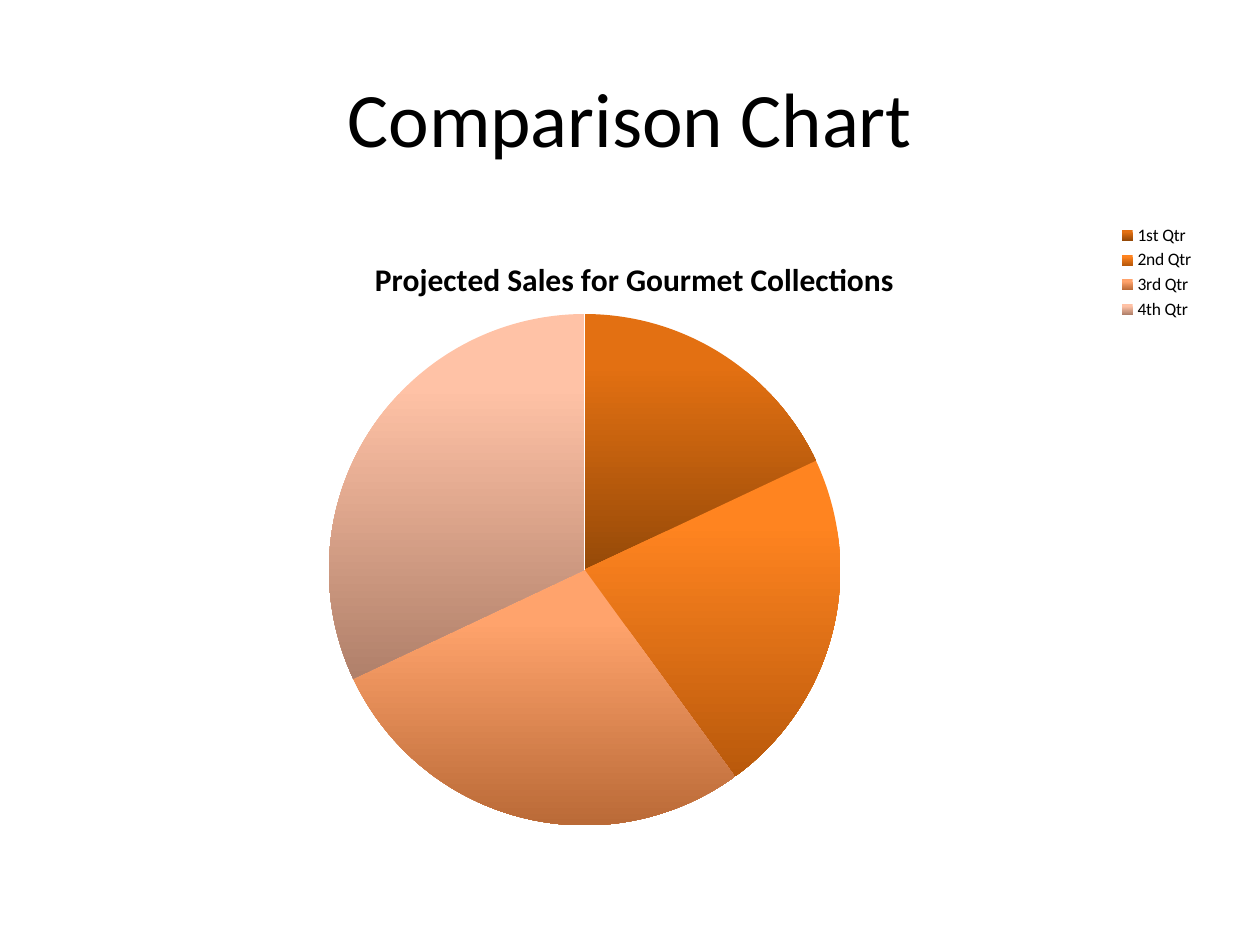
from dataclasses import dataclass

import pptx
import pptx.chart.data
import pptx.dml.color
import pptx.enum.chart
import pptx.enum.text
import pptx.oxml
import pptx.oxml.ns
import pptx.util
from pptx.util import Inches


@dataclass(frozen=True)
class Theme:
    font: str = "Calibri"
    text: str = "000000"
    title_size: int = 44
    chart_title_size: int = 18
    legend_size: int = 10


@dataclass(frozen=True)
class Quarter:
    name: str
    sales: int
    top_color: str
    bottom_color: str


THEME = Theme()
TITLE_ONLY = 5
QUARTERS = [
    Quarter("1st Qtr", 18, "E37012", "964A08"),
    Quarter("2nd Qtr", 22, "FF8420", "B9590B"),
    Quarter("3rd Qtr", 28, "FFA36C", "BA6A37"),
    Quarter("4th Qtr", 32, "FFC2A6", "B0806A"),
]


def rgb(value: str) -> pptx.dml.color.RGBColor:
    return pptx.dml.color.RGBColor.from_string(value)


def format_font(font, size: int, bold: bool = False) -> None:
    values = {"name": THEME.font, "size": pptx.util.Pt(size), "bold": bold}
    for name, value in values.items():
        setattr(font, name, value)
    font.color.rgb = rgb(THEME.text)


def set_layout(parent, index: int, **fractions: float) -> None:
    """Place a chart part by fractions of the chart's width and height."""
    for old in parent.findall(pptx.oxml.ns.qn("c:layout")):
        parent.remove(old)
    target = '<c:layoutTarget val="inner"/>' if "w" in fractions else ""
    modes = '<c:xMode val="edge"/><c:yMode val="edge"/>'
    sizes = "".join(f'<c:{name} val="{value}"/>' for name, value in fractions.items())
    parent.insert(index, pptx.oxml.parse_xml(
        f'<c:layout {pptx.oxml.ns.nsdecls("c")}><c:manualLayout>'
        f"{target}{modes}{sizes}</c:manualLayout></c:layout>"
    ))


def add_title(slide, text: str) -> None:
    title = slide.shapes.title
    place = {"left": 0.5, "top": 0.3, "width": 9, "height": 1.25}
    for name, value in place.items():
        setattr(title, name, Inches(value))
    frame = title.text_frame
    frame.vertical_anchor = pptx.enum.text.MSO_ANCHOR.MIDDLE
    para = frame.paragraphs[0]
    para.alignment = pptx.enum.text.PP_ALIGN.CENTER
    span = para.add_run()
    span.text = text
    format_font(span.font, THEME.title_size)


def shade_slice(point, quarter: Quarter) -> None:
    fill = point.format.fill
    fill.gradient()
    fill.gradient_angle = 270
    colors = (quarter.top_color, quarter.bottom_color)
    for stop, color, position in zip(fill.gradient_stops, colors, (0.2, 1)):
        stop.color.rgb = rgb(color)
        stop.position = position
    point.format.line.fill.background()


def add_sales_chart(slide, title: str, quarters: list[Quarter]) -> None:
    data = pptx.chart.data.CategoryChartData()
    data.categories = [quarter.name for quarter in quarters]
    data.add_series("Series 1", [quarter.sales for quarter in quarters])
    chart = slide.shapes.add_chart(
        pptx.enum.chart.XL_CHART_TYPE.PIE,
        Inches(0.5), Inches(1.75), Inches(9), Inches(4.95), data,
    ).chart
    format_font(chart.font, THEME.legend_size)

    chart.has_title = True
    span = chart.chart_title.text_frame.paragraphs[0].add_run()
    span.text = title
    format_font(span.font, THEME.chart_title_size, bold=True)
    set_layout(chart.chart_title.element, 1, x=0.27, y=0.05)

    chart.has_legend = True
    chart.legend.position = pptx.enum.chart.XL_LEGEND_POSITION.CORNER
    chart.legend.include_in_layout = False
    format_font(chart.legend.font, THEME.legend_size)

    plot = chart.plots[0]
    plot.vary_by_categories = True
    for index, quarter in enumerate(quarters):
        shade_slice(plot.series[0].points[index], quarter)
    plot_area = chart.element.find(".//" + pptx.oxml.ns.qn("c:plotArea"))
    set_layout(plot_area, 0, x=0.23, y=0.15, w=0.46, h=0.82)


def main() -> None:
    deck = pptx.Presentation()
    deck.slide_width, deck.slide_height = Inches(10), Inches(7.5)
    page = deck.slides.add_slide(deck.slide_layouts[TITLE_ONLY])
    add_title(page, "Comparison Chart")
    add_sales_chart(page, "Projected Sales for Gourmet Collections", QUARTERS)
    deck.save("out.pptx")


if __name__ == "__main__":
    main()
